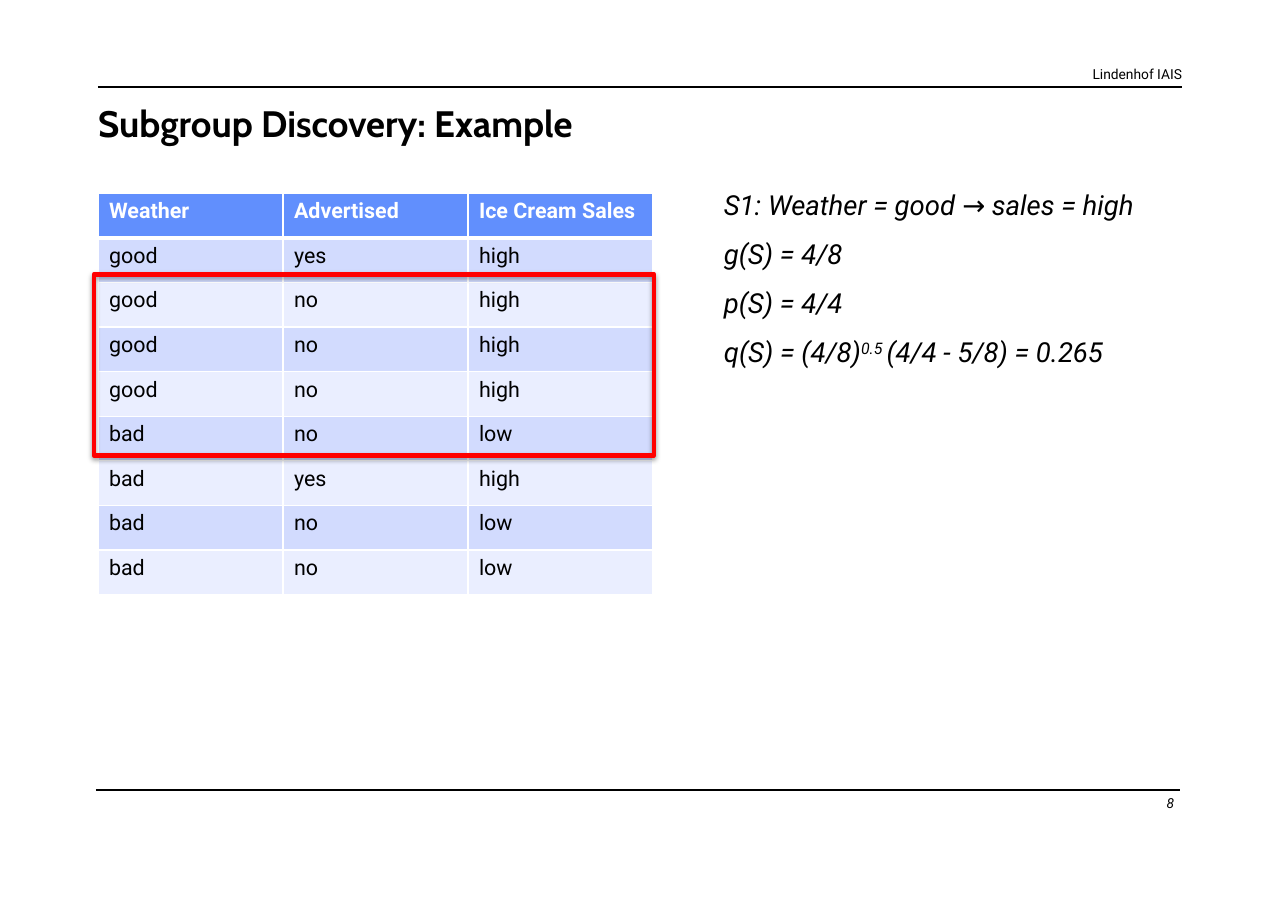
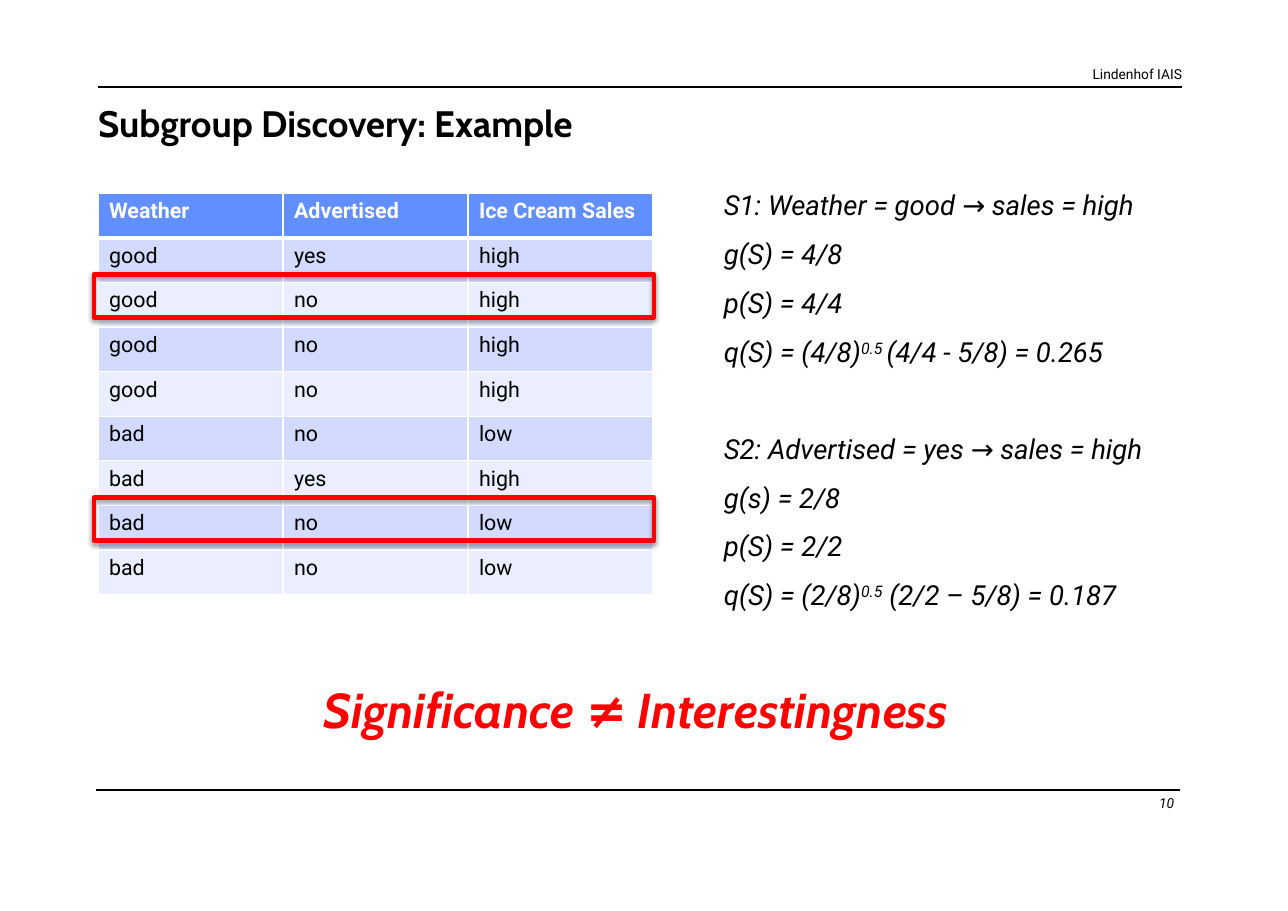
from collections import namedtuple

from lxml import etree
from pptx import Presentation
from pptx import util as u
from pptx.dml.color import RGBColor
from pptx.enum import shapes, text
from pptx.oxml import ns

EMU_PER_PX = 914400 / 110.2
COLORS = {
    "ink": "000000",
    "paper": "FFFFFF",
    "header": "618FFD",
    "odd_row": "D2DBFE",
    "even_row": "EAEEFF",
    "accent": "FF0000",
}
HEADING_FONT, BODY_FONT = "Cabin", "Roboto"
Box = namedtuple("Box", "left top width height")

PAGE = Box(0, 0, 1288, 911)
FRAME = Box(98, 66, 1084, 751)
TABLE = Box(98, 193, 555, 402)
FORMULAS = Box(713, 183, 474, 455)
CONCLUSION = Box(94, 674, 1084, 71)

SALES = [
    ("Weather", "Advertised", "Ice Cream Sales"),
    ("good", "yes", "high"),
    ("good", "no", "high"),
    ("good", "no", "high"),
    ("good", "no", "high"),
    ("bad", "no", "low"),
    ("bad", "yes", "high"),
    ("bad", "no", "low"),
    ("bad", "no", "low"),
]
WEATHER_GROUP = [
    ("S1: Weather = good → sales = high",),
    ("g(S) = 4/8",),
    ("p(S) = 4/4",),
    ("q(S) = (4/8)", "0.5 ", "(4/4 - 5/8) = 0.265"),
]
ADVERTISED_GROUP = [
    ("S2: Advertised = yes → sales = high",),
    ("g(s) = 2/8",),
    ("p(S) = 2/2",),
    ("q(S) = (2/8)", "0.5", " (2/2 – 5/8) = 0.187"),
]


def px(length):
    return u.Emu(round(length * EMU_PER_PX))


def color(name):
    return RGBColor.from_string(COLORS[name])


def place(box):
    return [px(length) for length in box]


def style(paragraph, size, font=BODY_FONT, ink="ink", bold=False, italic=False):
    for run in paragraph.runs:
        run.font.size = u.Pt(size)
        run.font.name = font
        run.font.bold = bold
        run.font.italic = italic
        run.font.color.rgb = color(ink)


def add_text_frame(slide, box, margins=True):
    frame = slide.shapes.add_textbox(*place(box)).text_frame
    frame.word_wrap = True
    if not margins:
        frame.margin_left = frame.margin_right = 0
        frame.margin_top = frame.margin_bottom = 0
    return frame


def add_label(slide, box, words, size, align, margins=False, **look):
    paragraph = add_text_frame(slide, box, margins).paragraphs[0]
    paragraph.text = words
    paragraph.alignment = align
    style(paragraph, size, **look)
    return paragraph


def add_rule(slide, left, top, width):
    rule = slide.shapes.add_connector(
        shapes.MSO_CONNECTOR.STRAIGHT, px(left), px(top), px(left + width), px(top))
    rule.line.color.rgb = color("ink")
    rule.line.width = u.Pt(0.85)
    etree.SubElement(rule._element.spPr, ns.qn("a:effectLst"))


def add_frame(slide, box, title, number):
    left, top, width, height = box
    right = text.PP_ALIGN.RIGHT
    add_label(slide, Box(left + width - 200, top, 200, 18), "Lindenhof IAIS", 9, right)
    add_rule(slide, left, top + 21, width)
    heading = add_label(slide, Box(left, top + 38, width, 78), title, 24,
                        text.PP_ALIGN.LEFT, font=HEADING_FONT, bold=True)
    heading.line_spacing = u.Pt(26.5)
    add_rule(slide, left - 2, top + 724, width)
    add_label(slide, Box(left + width - 68, top + 729, 60, 17), number, 9, right,
              italic=True)


def set_borders(cell, top, bottom):
    properties = cell._tc.get_or_add_tcPr()
    for side, points in (("L", 1), ("R", 1), ("T", top), ("B", bottom)):
        line = etree.SubElement(properties, ns.qn("a:ln" + side), w=str(u.Pt(points)))
        fill = etree.SubElement(line, ns.qn("a:solidFill"))
        etree.SubElement(fill, ns.qn("a:srgbClr"), val=COLORS["paper"])


def add_sales_table(slide, box):
    table = slide.shapes.add_table(len(SALES), len(SALES[0]), *place(box)).table
    for column in table.columns:
        column.width = px(box.width / len(SALES[0]))
    for row_index, values in enumerate(SALES):
        table.rows[row_index].height = px(box.height / len(SALES))
        is_header = row_index == 0
        fill = "header" if is_header else "odd_row" if row_index % 2 else "even_row"
        for column_index, value in enumerate(values):
            cell = table.cell(row_index, column_index)
            set_borders(cell, 3 if row_index == 1 else 1, 3 if is_header else 1)
            cell.fill.solid()
            cell.fill.fore_color.rgb = color(fill)
            paragraph = cell.text_frame.paragraphs[0]
            paragraph.text = value
            style(paragraph, 14, ink="paper" if is_header else "ink", bold=is_header)


def add_highlight(slide, box, first_row, row_count):
    top = box.top + first_row * box.height / len(SALES) - 8
    outline = Box(box.left - 4, top, box.width + 5, row_count * 46 - 3)
    shape = slide.shapes.add_shape(shapes.MSO_SHAPE.RECTANGLE, *place(outline))
    shape.fill.background()
    shape.line.color.rgb = color("accent")
    shape.line.width = u.Pt(3)
    shape.shadow.inherit = False
    effects = shape._element.spPr.find(ns.qn("a:effectLst"))
    shadow = etree.SubElement(
        effects, ns.qn("a:outerShdw"), blurRad=str(u.Pt(3.1)), dist=str(u.Pt(1.6)),
        dir="5400000", rotWithShape="0")
    tint = etree.SubElement(shadow, ns.qn("a:srgbClr"), val=COLORS["ink"])
    etree.SubElement(tint, ns.qn("a:alpha"), val="38000")


def add_formulas(slide, box, groups):
    frame = add_text_frame(slide, box)
    for group_index, group in enumerate(groups):
        for line_index, parts in enumerate(group):
            is_first = group_index == line_index == 0
            paragraph = frame.paragraphs[0] if is_first else frame.add_paragraph()
            paragraph.space_after = u.Pt(10.3)
            if group_index and line_index == 0:
                paragraph.space_before = u.Pt(31.4)
            for part_index, part in enumerate(parts):
                run = paragraph.add_run()
                run.text = part
                if part_index == 1:
                    run._r.get_or_add_rPr().set("baseline", "30000")
            style(paragraph, 18, italic=True)


def add_example_slide(presentation, number, groups, highlights, conclusion=None):
    slide = presentation.slides.add_slide(presentation.slide_layouts[6])
    add_frame(slide, FRAME, "Subgroup Discovery: Example", number)
    add_sales_table(slide, TABLE)
    add_formulas(slide, FORMULAS, groups)
    for first_row, row_count in highlights:
        add_highlight(slide, TABLE, first_row, row_count)
    if conclusion:
        add_label(slide, CONCLUSION, conclusion, 32, text.PP_ALIGN.CENTER, margins=True,
                  font=HEADING_FONT, ink="accent", bold=True, italic=True)


def main():
    presentation = Presentation()
    presentation.slide_width = px(PAGE.width)
    presentation.slide_height = px(PAGE.height)
    add_example_slide(presentation, "8", [WEATHER_GROUP], [(2, 4)])
    add_example_slide(presentation, "10", [WEATHER_GROUP, ADVERTISED_GROUP],
                      [(2, 1), (7, 1)], "Significance ≠ Interestingness")
    presentation.save("out.pptx")


if __name__ == "__main__":
    main()
